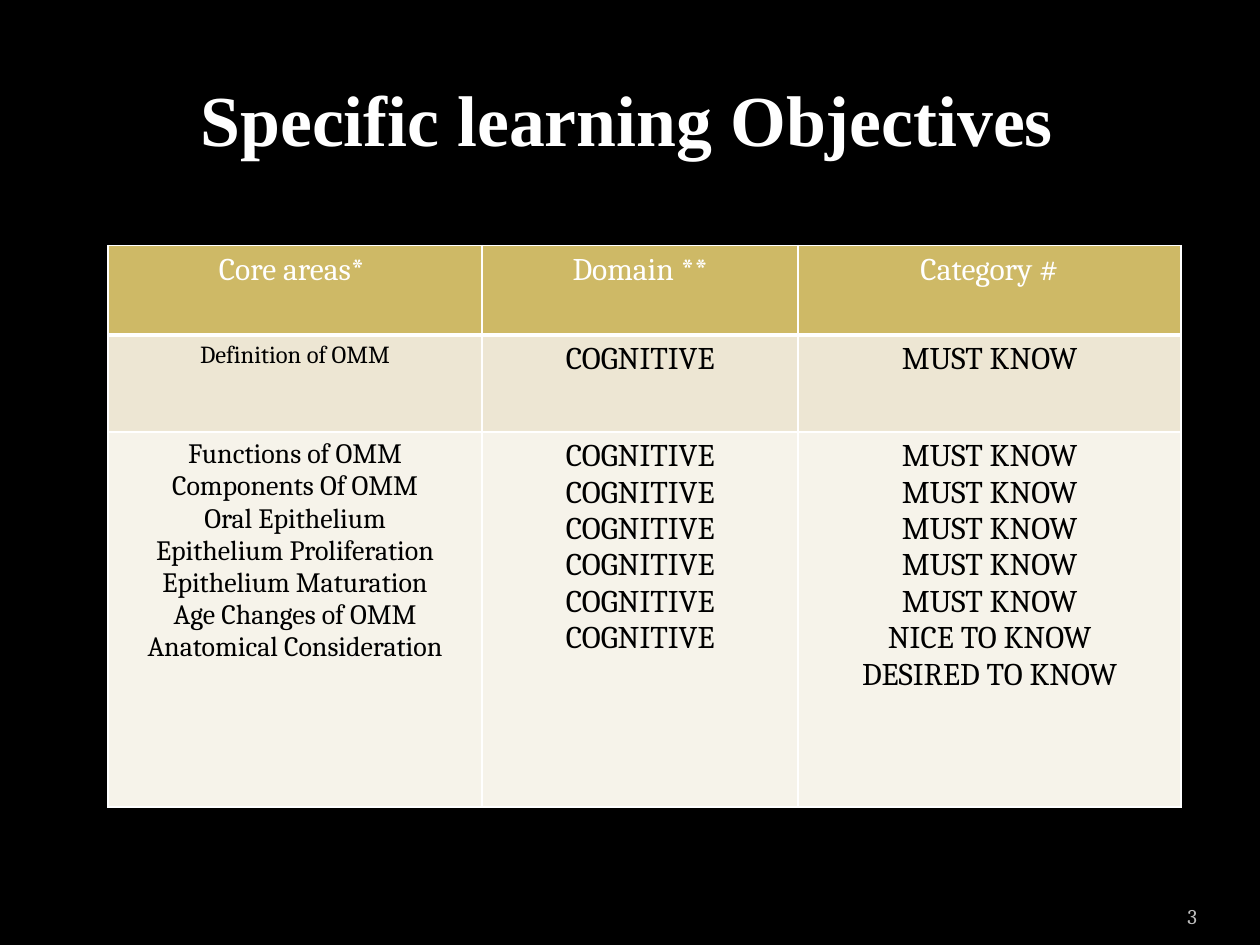
from dataclasses import dataclass
from typing import Sequence

from lxml.etree import SubElement
from pptx import Presentation
from pptx.dml.color import RGBColor as Color
from pptx.enum.text import MSO_ANCHOR as Anchor, PP_ALIGN as Align
from pptx.oxml.ns import qn
from pptx.util import Cm, Pt


@dataclass(frozen=True)
class Theme:
    background: str = "000000"
    light: str = "FFFFFF"
    dark: str = "000000"
    muted: str = "BDBDBD"
    header_fill: str = "CEB966"
    band_fill: str = "EDE6D3"
    plain_fill: str = "F6F3EA"
    title_font: str = "Times New Roman"
    body_font: str = "Cambria"
    title_size: int = 41
    body_size: int = 18
    list_size: int = 16
    small_size: int = 14
    number_size: int = 12


THEME = Theme()


@dataclass(frozen=True)
class Row:
    height: float
    fill: str
    color: str
    first_size: int
    cells: Sequence[Sequence[str]]
    bottom_border: int = 1


COLUMN_WIDTHS = (7.54, 6.37, 7.72)
ROWS = (
    Row(1.8, THEME.header_fill, THEME.light, THEME.body_size,
        (["Core areas* "], ["Domain **"], ["Category #"]), bottom_border=3),
    Row(1.96, THEME.band_fill, THEME.dark, THEME.small_size,
        (["Definition of OMM"], ["COGNITIVE"], ["MUST KNOW"])),
    Row(7.56, THEME.plain_fill, THEME.dark, THEME.list_size,
        (["Functions of OMM", "Components Of OMM", "Oral Epithelium",
          "Epithelium Proliferation", "Epithelium Maturation",
          "Age Changes of OMM", "Anatomical Consideration"],
         ["COGNITIVE"] * 6,
         ["MUST KNOW"] * 5 + ["NICE TO KNOW", "DESIRED TO KNOW"])),
)


def write_text(frame, lines: Sequence[str], *, size: int, color: str,
               font: str = THEME.body_font, bold: bool = False,
               align=Align.CENTER) -> None:
    for index, line in enumerate(lines):
        paragraph = frame.paragraphs[0] if index == 0 else frame.add_paragraph()
        paragraph.alignment = align
        run = paragraph.add_run()
        run.text = line
        run.font.name = font
        run.font.size = Pt(size)
        run.font.bold = bold
        run.font.color.rgb = Color.from_string(color)


def set_borders(cell, color: str, bottom_width: int) -> None:
    properties = cell._tc.get_or_add_tcPr()
    widths = {"a:lnL": 1, "a:lnR": 1, "a:lnT": 1, "a:lnB": bottom_width}
    for position, (tag, width) in enumerate(widths.items()):
        line = SubElement(properties, qn(tag), w=str(Pt(width)))
        fill = SubElement(line, qn("a:solidFill"))
        SubElement(fill, qn("a:srgbClr"), val=color)
        properties.insert(position, line)  # borders come before the cell fill


def add_objectives_table(slide, rows: Sequence[Row]) -> None:
    table = slide.shapes.add_table(
        len(rows), len(COLUMN_WIDTHS), Cm(2.18), Cm(4.95),
        Cm(sum(COLUMN_WIDTHS)), Cm(sum(row.height for row in rows))).table
    for column, width in zip(table.columns, COLUMN_WIDTHS):
        column.width = Cm(width)
    for row_index, row in enumerate(rows):
        table.rows[row_index].height = Cm(row.height)
        for column_index, lines in enumerate(row.cells):
            cell = table.cell(row_index, column_index)
            cell.margin_left = cell.margin_right = Cm(0.19)
            cell.margin_top = cell.margin_bottom = Cm(0.13)
            cell.fill.solid()
            cell.fill.fore_color.rgb = Color.from_string(row.fill)
            set_borders(cell, THEME.light, row.bottom_border)
            size = row.first_size if column_index == 0 else THEME.body_size
            write_text(cell.text_frame, lines, size=size, color=row.color)


def add_title(slide, text: str) -> None:
    title = slide.shapes.title
    title.left, title.top = Cm(3.18), Cm(0.84)
    title.width, title.height = Cm(19.3), Cm(3.07)
    title.text_frame.vertical_anchor = Anchor.MIDDLE
    write_text(title.text_frame, [text], size=THEME.title_size,
               color=THEME.light, font=THEME.title_font, bold=True)


def add_page_number(slide, number: str) -> None:
    box = slide.shapes.add_textbox(Cm(22.02), Cm(17.83), Cm(2.11), Cm(1.02))
    frame = box.text_frame
    frame.word_wrap = True
    frame.margin_left = frame.margin_right = 0
    frame.vertical_anchor = Anchor.BOTTOM
    write_text(frame, [number], size=THEME.number_size, color=THEME.muted,
               align=Align.RIGHT)


def main() -> None:
    presentation = Presentation()
    presentation.slide_width, presentation.slide_height = Cm(25.4), Cm(19.05)
    slide = presentation.slides.add_slide(presentation.slide_layouts[5])

    # Background
    slide.background.fill.solid()
    slide.background.fill.fore_color.rgb = Color.from_string(THEME.background)

    # Content
    add_title(slide, "Specific learning Objectives ")
    add_objectives_table(slide, ROWS)
    add_page_number(slide, "3")

    presentation.save("out.pptx")


if __name__ == "__main__":
    main()
